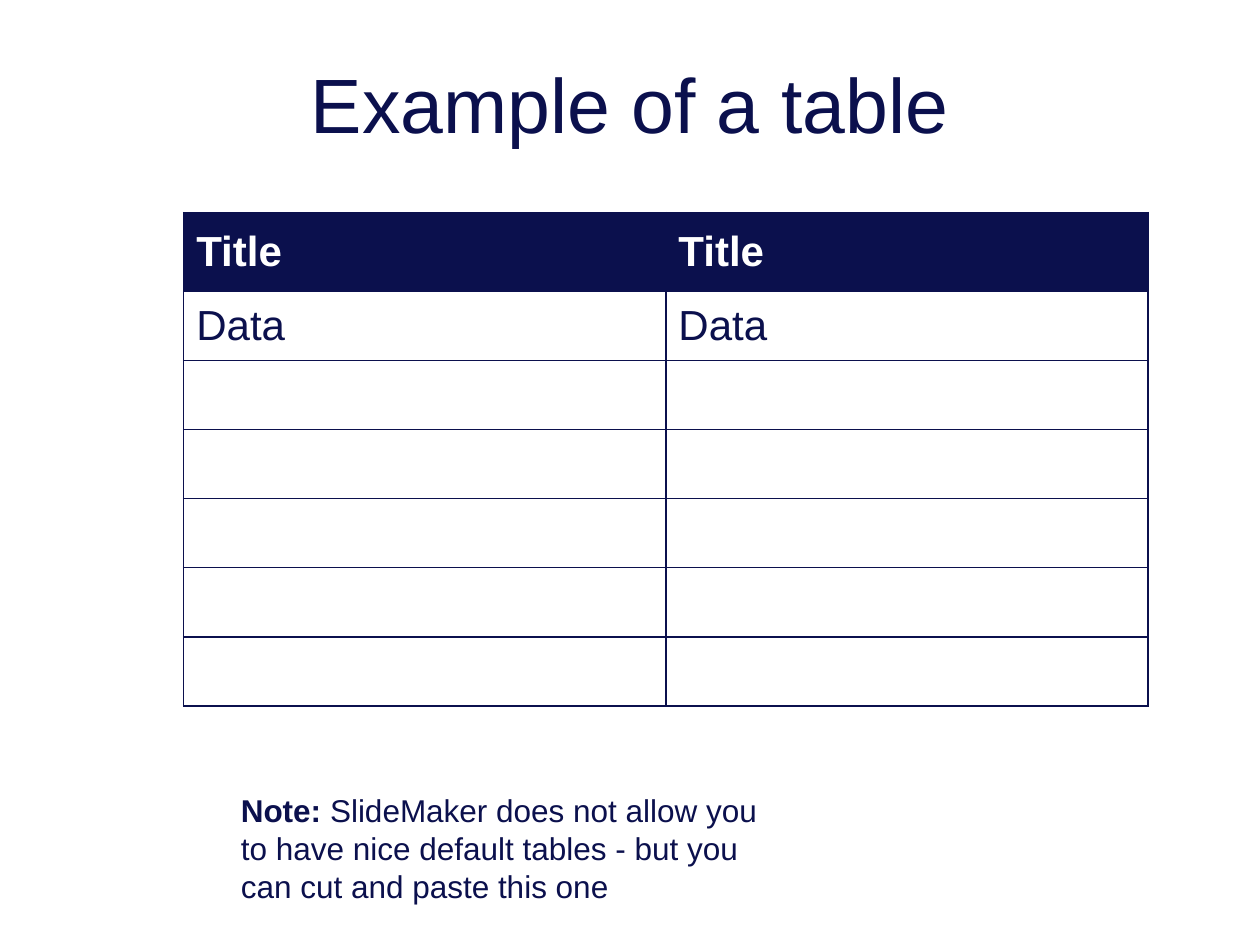
"""Build a slide with a titled two-column table and a note below it."""

from dataclasses import dataclass

from lxml.etree import SubElement
from pptx import Presentation
from pptx.dml.color import RGBColor
from pptx.enum.text import MSO_ANCHOR, MSO_AUTO_SIZE, PP_ALIGN
from pptx.oxml.ns import qn
from pptx.util import Pt


@dataclass(frozen=True)
class Theme:
    navy: RGBColor = RGBColor(0x0B, 0x10, 0x4D)
    white: RGBColor = RGBColor(0xFF, 0xFF, 0xFF)
    font: str = "Arial"
    title_size: int = 44
    table_size: int = 24
    note_size: int = 18


theme = Theme()


def add_span(para, text, size, color=theme.navy, bold=False):
    span = para.add_run()
    span.text = text
    span.font.name = theme.font
    span.font.size = Pt(size)
    span.font.bold = bold
    span.font.color.rgb = color


def add_borders(cell):
    properties = cell._tc.get_or_add_tcPr()
    for side in ("a:lnL", "a:lnR", "a:lnT", "a:lnB"):
        line = SubElement(properties, qn(side), w=str(Pt(1)))
        fill = SubElement(line, qn("a:solidFill"))
        SubElement(fill, qn("a:srgbClr"), val=str(theme.navy))


deck = Presentation()
deck.slide_width, deck.slide_height = Pt(720), Pt(540)
page = deck.slides.add_slide(deck.slide_layouts[6])
page.background.fill.solid()
page.background.fill.fore_color.rgb = theme.white

title_box = page.shapes.add_textbox(Pt(54), Pt(13.5), Pt(612), Pt(90))
title_box.fill.solid()
title_box.fill.fore_color.rgb = theme.white
title_color = title_box.fill._xPr.find(qn("a:solidFill")).find(qn("a:srgbClr"))
SubElement(title_color, qn("a:alpha"), val="50000")
title_frame = title_box.text_frame
title_frame.word_wrap = True
title_frame.vertical_anchor = MSO_ANCHOR.MIDDLE
title_para = title_frame.paragraphs[0]
title_para.alignment = PP_ALIGN.CENTER
add_span(title_para, "Example of a table", theme.title_size)

row_texts = ["Title", "Data", "", "", "", "", ""]
header_height, row_height = 45, 39.5
table_height = header_height + row_height * (len(row_texts) - 1)
table = page.shapes.add_table(
    len(row_texts), 2, Pt(105), Pt(121.5), Pt(551), Pt(table_height)
).table
for row_index, text in enumerate(row_texts):
    is_header = row_index == 0
    row = table.rows[row_index]
    row.height = Pt(header_height if is_header else row_height)
    for cell in row.cells:
        add_borders(cell)
        cell.fill.solid()
        cell.fill.fore_color.rgb = theme.navy if is_header else theme.white
        cell.vertical_anchor = MSO_ANCHOR.MIDDLE
        if text:
            color = theme.white if is_header else theme.navy
            add_span(cell.text_frame.paragraphs[0], text, theme.table_size, color, is_header)

note_box = page.shapes.add_textbox(Pt(130.5), Pt(448.5), Pt(323), Pt(72))
note_frame = note_box.text_frame
note_frame.word_wrap = True
note_frame.auto_size = MSO_AUTO_SIZE.SHAPE_TO_FIT_TEXT
note_para = note_frame.paragraphs[0]
add_span(note_para, "Note: ", theme.note_size, bold=True)
add_span(
    note_para,
    "SlideMaker does not allow you to have nice default tables"
    " - but you can cut and paste this one",
    theme.note_size,
)

deck.save("out.pptx")
